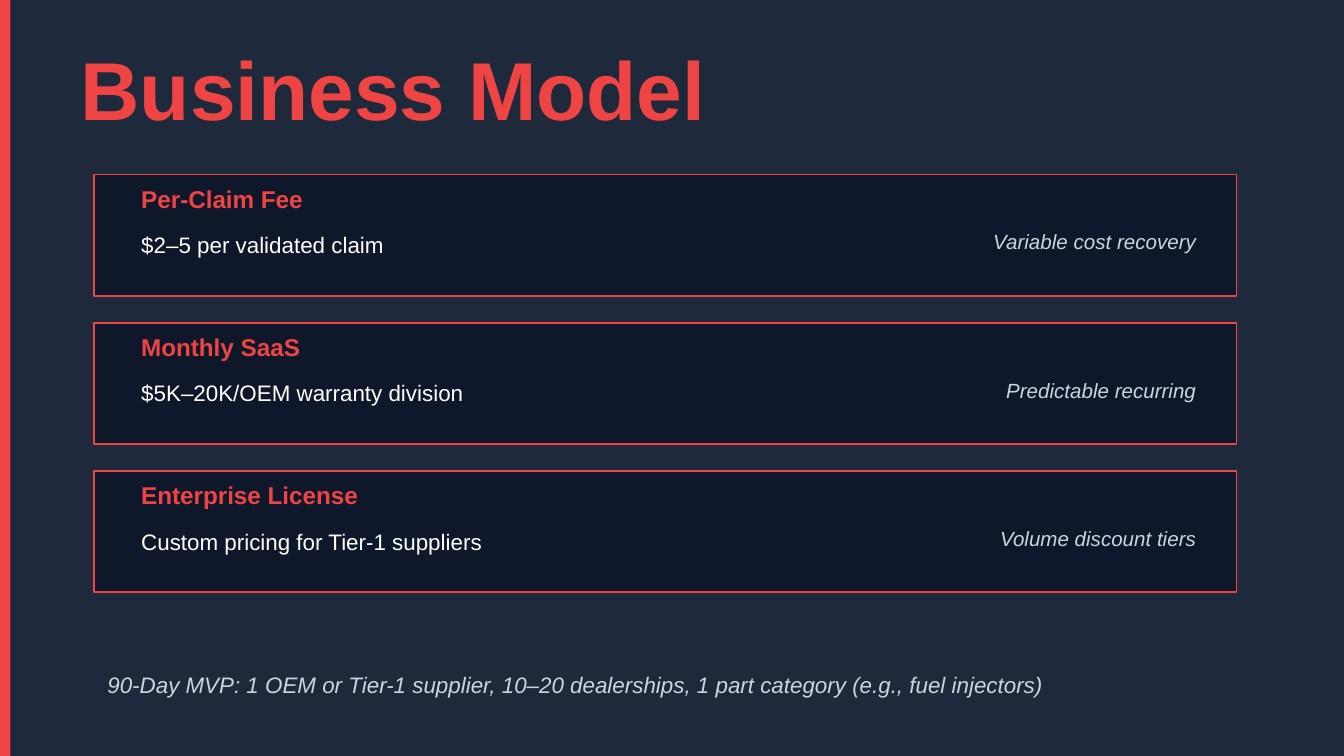
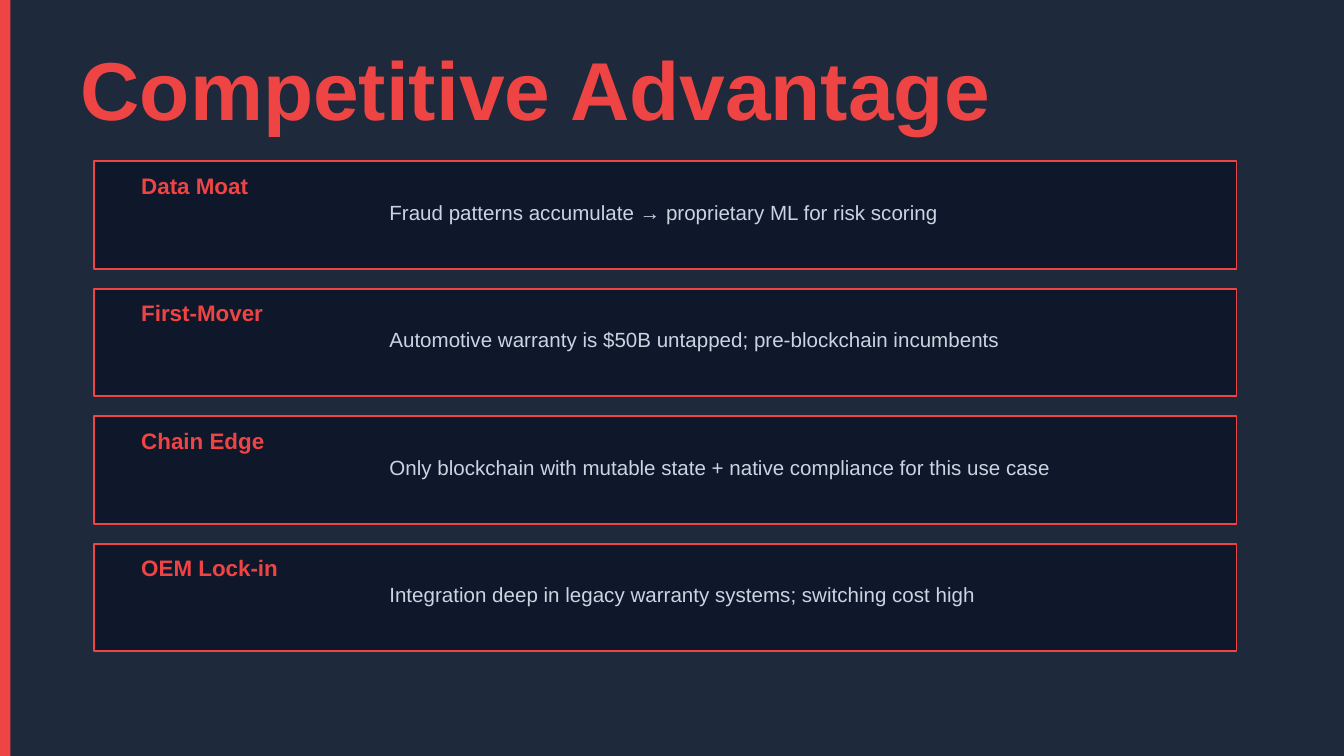
from pptx import Presentation
from pptx.dml.color import RGBColor
from pptx.enum.shapes import MSO_SHAPE
from pptx.enum.text import MSO_ANCHOR, MSO_AUTO_SIZE, PP_ALIGN
from pptx.util import Cm, Pt

COLORS = {
    "background": "1E293B",
    "card": "0F172A",
    "accent": "EF4444",
    "white": "FFFFFF",
    "muted": "CBD5E1",
}
FONT = "Arial"
SLIDE_WIDTH, SLIDE_HEIGHT = 25.4, 14.29
CARD_LEFT, CARD_WIDTH = 1.78, 21.59
TITLE_ONLY = 5

TITLE = {"size": 44, "bold": True, "color": "accent"}
PLAN_NAME = {"size": 13, "bold": True, "color": "accent"}
PLAN_PRICE = {"size": 12, "color": "white"}
PLAN_BENEFIT = {"size": 11, "italic": True, "color": "muted"}
FOOTNOTE = {"size": 12, "italic": True, "color": "muted"}
ADVANTAGE_NAME = {"size": 12, "bold": True, "color": "accent"}
ADVANTAGE_DETAIL = {"size": 11, "color": "muted"}

PLANS = [
    ("Per-Claim Fee", "$2–5 per validated claim", "Variable cost recovery"),
    ("Monthly SaaS", "$5K–20K/OEM warranty division", "Predictable recurring"),
    ("Enterprise License", "Custom pricing for Tier-1 suppliers", "Volume discount tiers"),
]
MVP_SCOPE = (
    "90-Day MVP: 1 OEM or Tier-1 supplier, 10–20 dealerships, "
    "1 part category (e.g., fuel injectors)"
)
ADVANTAGES = [
    ("Data Moat", "Fraud patterns accumulate → proprietary ML for risk scoring"),
    ("First-Mover", "Automotive warranty is $50B untapped; pre-blockchain incumbents"),
    ("Chain Edge", "Only blockchain with mutable state + native compliance for this use case"),
    ("OEM Lock-in", "Integration deep in legacy warranty systems; switching cost high"),
]


def rgb(name):
    return RGBColor.from_string(COLORS[name])


def write_text(shape, text, style, alignment=PP_ALIGN.LEFT):
    frame = shape.text_frame
    frame_format = {
        "word_wrap": True,
        "auto_size": MSO_AUTO_SIZE.NONE,
        "vertical_anchor": MSO_ANCHOR.MIDDLE,
    }
    for name, value in frame_format.items():
        setattr(frame, name, value)
    paragraph = frame.paragraphs[0]
    paragraph.alignment = alignment
    run = paragraph.add_run()
    run.text = text
    font_format = {
        "name": FONT,
        "size": Pt(style["size"]),
        "bold": style.get("bold", False),
        "italic": style.get("italic", False),
    }
    for name, value in font_format.items():
        setattr(run.font, name, value)
    run.font.color.rgb = rgb(style["color"])


def add_text(slide, box, text, style, alignment=PP_ALIGN.LEFT):
    shape = slide.shapes.add_textbox(*map(Cm, box))
    write_text(shape, text, style, alignment)


def add_panel(slide, box, fill, line=None):
    shape = slide.shapes.add_shape(MSO_SHAPE.RECTANGLE, *map(Cm, box))
    shape.shadow.inherit = False
    shape.fill.solid()
    shape.fill.fore_color.rgb = rgb(fill)
    if line:
        shape.line.color.rgb = rgb(line)
        shape.line.width = Pt(1)
    else:
        shape.line.fill.background()


def add_titled_slide(presentation, title):
    slide = presentation.slides.add_slide(presentation.slide_layouts[TITLE_ONLY])
    add_panel(slide, (0, 0, 0.2, SLIDE_HEIGHT), "accent")
    position = {"left": 1.27, "top": 1.02, "width": 22.86, "height": 1.27}
    for name, value in position.items():
        setattr(slide.shapes.title, name, Cm(value))
    write_text(slide.shapes.title, title, TITLE)
    return slide


def add_plan_card(slide, box, plan):
    left, top, width, height = box
    name, price, benefit = plan
    add_panel(slide, box, "card", "accent")
    add_text(slide, (left + 0.64, top + 0.13, 7.62, 0.64), name, PLAN_NAME)
    add_text(slide, (left + 0.64, top + 0.76, 8.89, 1.14), price, PLAN_PRICE)
    benefit_box = (left + width - 10.16, top + 0.51, 9.65, 1.52)
    add_text(slide, benefit_box, benefit, PLAN_BENEFIT, PP_ALIGN.RIGHT)


def add_advantage_card(slide, box, advantage):
    left, top, width, height = box
    name, detail = advantage
    add_panel(slide, box, "card", "accent")
    add_text(slide, (left + 0.64, top + 0.13, 4.57, 0.64), name, ADVANTAGE_NAME)
    detail_box = (left + 5.33, top + 0.13, width - 6.6, height - 0.38)
    add_text(slide, detail_box, detail, ADVANTAGE_DETAIL)


def add_card_stack(slide, top, height, gap, add_card, entries):
    for index, entry in enumerate(entries):
        box = (CARD_LEFT, top + index * (height + gap), CARD_WIDTH, height)
        add_card(slide, box, entry)


def build_business_model(presentation):
    slide = add_titled_slide(presentation, "Business Model")
    add_card_stack(slide, 3.3, 2.29, 0.51, add_plan_card, PLANS)
    add_text(slide, (CARD_LEFT, 12.19, CARD_WIDTH, 1.52), MVP_SCOPE, FOOTNOTE)


def build_competitive_advantage(presentation):
    slide = add_titled_slide(presentation, "Competitive Advantage")
    add_card_stack(slide, 3.05, 2.03, 0.38, add_advantage_card, ADVANTAGES)


def main():
    presentation = Presentation()
    presentation.slide_width = Cm(SLIDE_WIDTH)
    presentation.slide_height = Cm(SLIDE_HEIGHT)
    background = presentation.slide_master.background.fill
    background.solid()
    background.fore_color.rgb = rgb("background")
    build_business_model(presentation)
    build_competitive_advantage(presentation)
    presentation.save("out.pptx")


if __name__ == "__main__":
    main()
